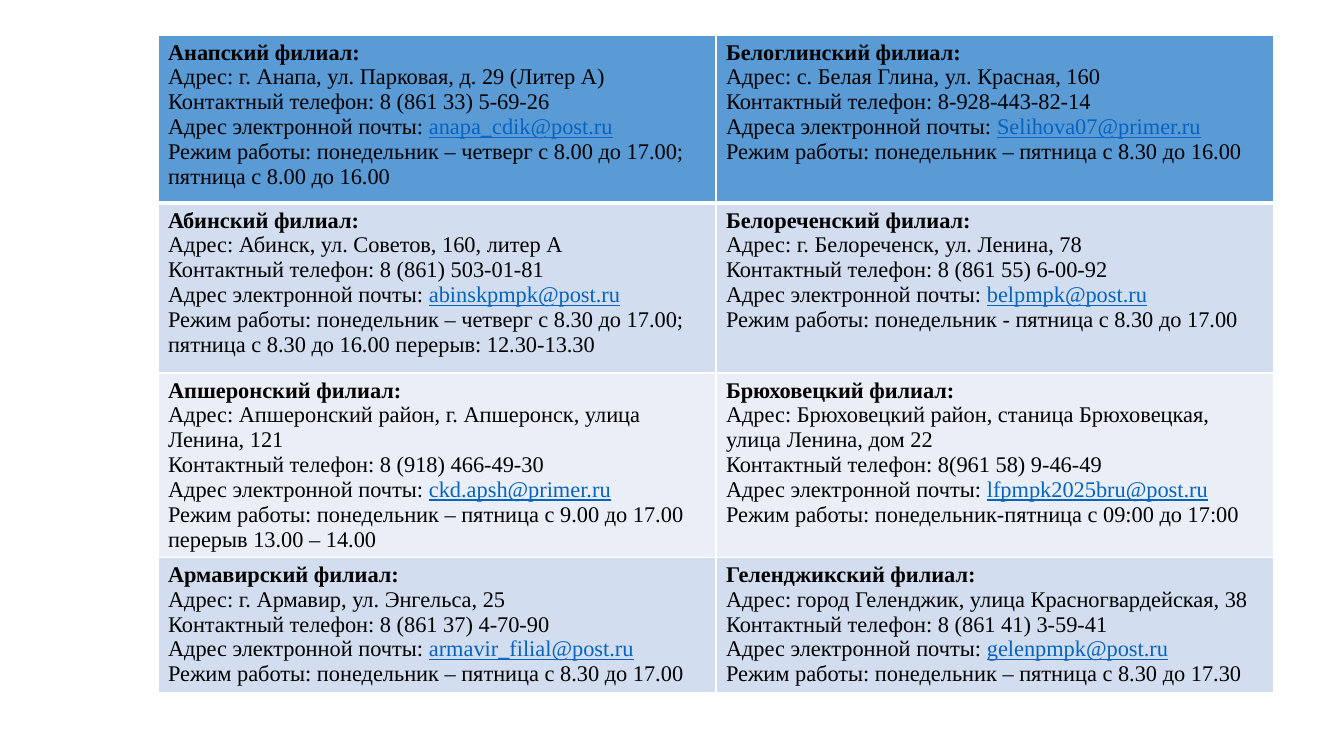
from lxml.etree import SubElement
from pptx import Presentation
from pptx.dml.color import RGBColor
from pptx.oxml.ns import qn
from pptx.util import Pt

PX = 9144000 / 1008  # EMU in one px, 100.8 px to the inch


def px(count):
    return round(count * PX)


def color(value):
    return RGBColor.from_string(value)


# Branches: name, address, phone, e-mail label, e-mail, opening hours
EMAIL = "Адрес электронной почты: "
BRANCHES = [
    [
        ("Анапский", "г. Анапа, ул. Парковая, д. 29 (Литер А)", "8 (861 33) 5-69-26",
         EMAIL, "anapa_cdik@post.ru",
         "понедельник – четверг с 8.00 до 17.00; пятница с 8.00 до 16.00"),
        ("Белоглинский", "с. Белая Глина, ул. Красная, 160", "8-928-443-82-14",
         "Адреса электронной почты: ", "Selihova07@primer.ru",
         "понедельник – пятница с 8.30 до 16.00"),
    ],
    [
        ("Абинский", "Абинск, ул. Советов, 160, литер А", "8 (861) 503-01-81",
         EMAIL, "abinskpmpk@post.ru",
         "понедельник – четверг с 8.30 до 17.00; пятница с 8.30 до 16.00 "
         "перерыв: 12.30-13.30"),
        ("Белореченский", "г. Белореченск, ул. Ленина, 78", "8 (861 55) 6-00-92",
         EMAIL, "belpmpk@post.ru",
         "понедельник - пятница с 8.30 до 17.00"),
    ],
    [
        ("Апшеронский", "Апшеронский район, г. Апшеронск, улица Ленина, 121",
         "8 (918) 466-49-30", EMAIL, "ckd.apsh@primer.ru",
         "понедельник – пятница с 9.00 до 17.00 перерыв 13.00 – 14.00"),
        ("Брюховецкий", "Брюховецкий район, станица Брюховецкая, улица Ленина, дом 22",
         "8(961 58) 9-46-49", EMAIL, "lfpmpk2025bru@post.ru",
         "понедельник-пятница с 09:00 до 17:00"),
    ],
    [
        ("Армавирский", "г. Армавир, ул. Энгельса, 25", "8 (861 37) 4-70-90",
         EMAIL, "armavir_filial@post.ru",
         "понедельник – пятница с 8.30 до 17.00"),
        ("Геленджикский", "город Геленджик, улица Красногвардейская, 38",
         "8 (861 41) 3-59-41", EMAIL, "gelenpmpk@post.ru",
         "понедельник – пятница с 8.30 до 17.30"),
    ],
]
ROW_HEIGHTS = [168, 170, 184, 135]
ROW_FILLS = ["5B9BD5", "D2DEEF", "EAEFF7", "D2DEEF"]
COLUMN_WIDTH = 558

# Deck and page
deck = Presentation()
deck.slide_width, deck.slide_height = px(1344), px(756)
page = deck.slides.add_slide(deck.slide_layouts[6])

# Table grid
table = page.shapes.add_table(
    len(BRANCHES), 2, px(158), px(35), px(2 * COLUMN_WIDTH), px(sum(ROW_HEIGHTS))
).table
for column in table.columns:
    column.width = px(COLUMN_WIDTH)
for row, height in zip(table.rows, ROW_HEIGHTS):
    row.height = px(height)

for row_index, branches in enumerate(BRANCHES):
    for column_index, branch in enumerate(branches):
        name, address, phone, email_label, email, hours = branch
        cell = table.cell(row_index, column_index)

        # White borders, thicker under the first row
        thick_side = {0: "lnB", 1: "lnT"}.get(row_index)
        properties = cell._tc.get_or_add_tcPr()
        for side in ("lnL", "lnR", "lnT", "lnB"):
            width = Pt(3 if side == thick_side else 1)
            line = SubElement(properties, qn(f"a:{side}"), w=str(width))
            line_fill = SubElement(line, qn("a:solidFill"))
            SubElement(line_fill, qn("a:srgbClr"), val="FFFFFF")
        cell.fill.solid()
        cell.fill.fore_color.rgb = color(ROW_FILLS[row_index])

        # Branch details
        cell.text_frame.text = "\n".join([
            f"{name} филиал:",
            f"Адрес: {address}",
            f"Контактный телефон: {phone}",
            email_label,
            f"Режим работы: {hours}",
        ])
        paragraphs = cell.text_frame.paragraphs
        email_span = paragraphs[3].add_run()
        email_span.text = email
        for para in paragraphs:
            for span in para.runs:
                span.font.name = "Times New Roman"
                span.font.size = Pt(16)
                span.font.bold = False
                span.font.color.rgb = color("000000")
        paragraphs[0].runs[0].font.bold = True
        email_span.font.color.rgb = color("0563C1")
        email_span.font.underline = True

deck.save("out.pptx")
